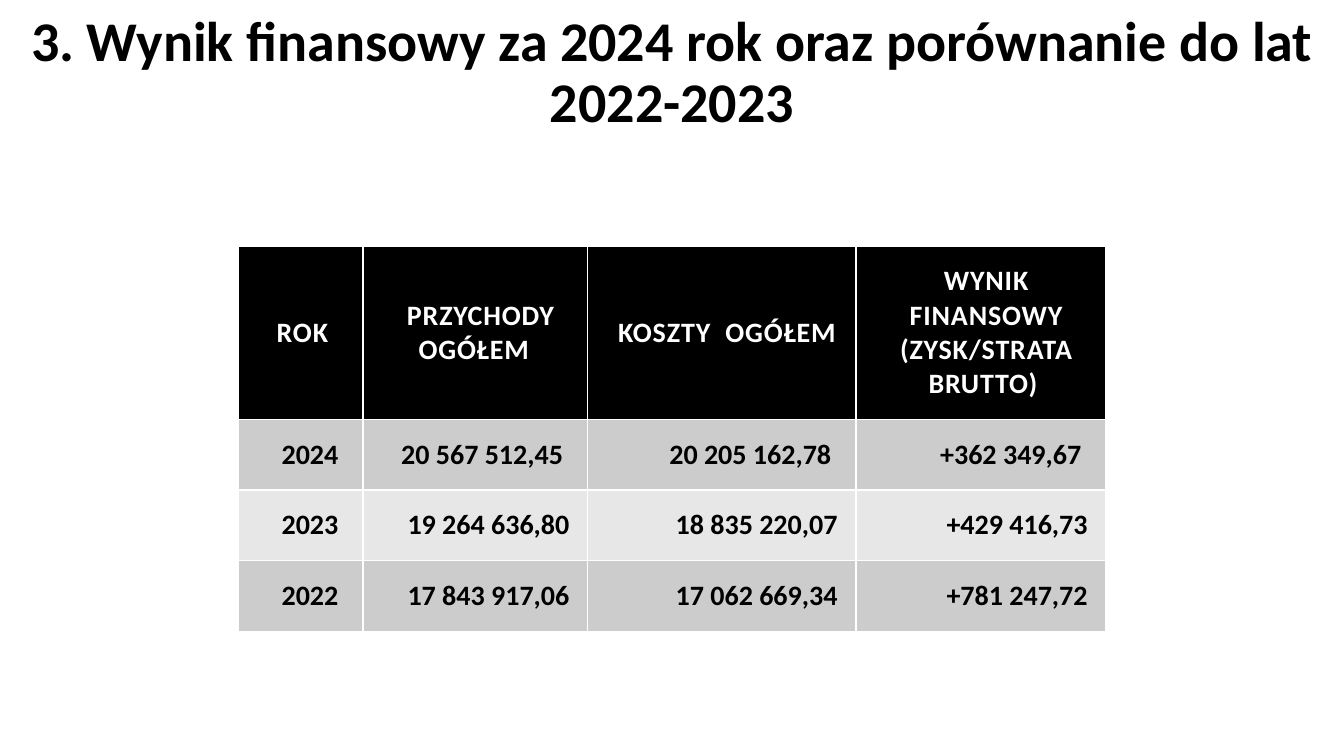
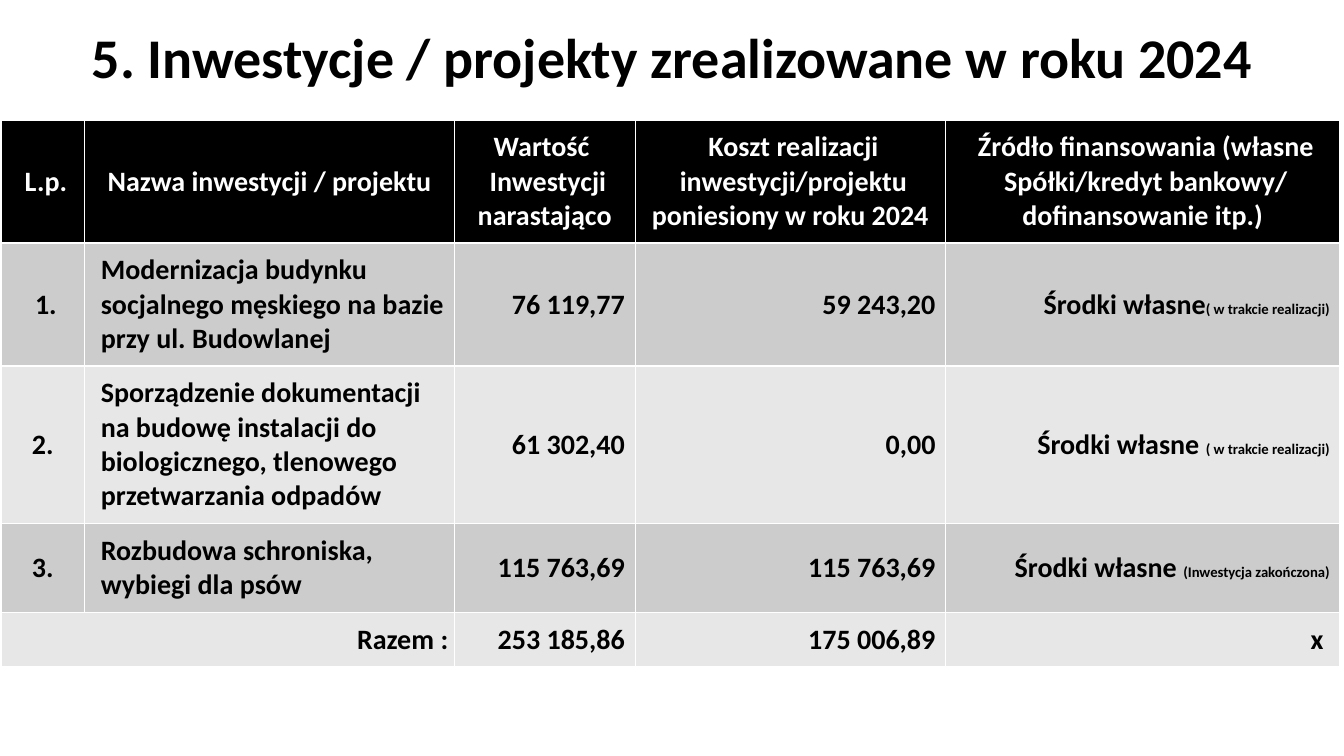
from dataclasses import dataclass
from lxml.etree import SubElement
from pptx import Presentation
from pptx.dml.color import RGBColor
from pptx.enum.text import MSO_ANCHOR, MSO_AUTO_SIZE, PP_ALIGN
from pptx.oxml.ns import qn
from pptx.util import Inches, Pt


@dataclass(frozen=True)
class Theme:
    font: str = "Calibri"
    black: str = "000000"
    white: str = "FFFFFF"
    bands: tuple = ("CCCCCC", "E7E7E7")
    title: float = 40
    body: float = 20
    note: float = 10.5
    rule: float = 1


THEME = Theme()
ALIGN = {"l": PP_ALIGN.LEFT, "c": PP_ALIGN.CENTER, "r": PP_ALIGN.RIGHT}

# A tuple cell holds main text and a small note; None joins the cell to its left.
SLIDES = [
    {
        "title": "3. Wynik finansowy za 2024 rok oraz porównanie do lat 2022-2023",
        "height": 1.47,
        "at": (2.36, 2.44),
        "cols": (1.24, 2.23, 2.66, 2.48),
        "heights": (1.71, 0.69, 0.69, 0.69),
        "align": "rrrr",
        "pad": (0.29, 0.18, 0.18, 0.18),
        "track": 0.6,
        "rows": [
            ["ROK ", "PRZYCHODY OGÓŁEM  ", "KOSZTY  OGÓŁEM ",
             "WYNIK FINANSOWY (ZYSK/STRATA BRUTTO) "],
            ["2024 ", "20 567 512,45 ", "20 205 162,78 ", "+362 349,67 "],
            ["2023 ", "19 264 636,80", "18 835 220,07", "+429 416,73"],
            ["2022 ", "17 843 917,06", "17 062 669,34", "+781 247,72"],
        ],
    },
    {
        "title": "5. Inwestycje / projekty zrealizowane w roku 2024",
        "height": 1.2,
        "at": (0.01, 1.19),
        "cols": (0.83, 3.67, 1.79, 3.08, 3.91),
        "heights": (1.21, 1.22, 1.56, 0.87, 0.54),
        "align": "clrrr",
        "pad": (0.16, 0.1, 0.1, 0.1),
        "track": 0,
        "rows": [
            ["L.p.", "Nazwa inwestycji / projektu ",
             "Wartość  \nInwestycji narastająco ",
             "Koszt realizacji inwestycji/projektu poniesiony w roku 2024 ",
             "Źródło finansowania (własne Spółki/kredyt bankowy/ dofinansowanie itp.) "],
            ["1.", "Modernizacja budynku socjalnego męskiego na bazie przy ul. Budowlanej",
             "76 119,77", "59 243,20", ("Środki własne", "( w trakcie realizacji)")],
            ["2. ", "Sporządzenie dokumentacji na budowę instalacji do biologicznego, "
             "tlenowego przetwarzania odpadów",
             "61 302,40", "0,00", ("Środki własne ", "( w trakcie realizacji)")],
            ["3. ", "Rozbudowa schroniska, wybiegi dla psów",
             "115 763,69", "115 763,69", ("Środki własne ", "(Inwestycja zakończona)")],
            ["Razem : ", None, "253 185,86", "175 006,89", "x "],
        ],
    },
]


def assign(obj, values):
    for name, value in values.items():
        setattr(obj, name, value)


def margins(pad):
    sides = ("left", "top", "right", "bottom")
    return {f"margin_{side}": Inches(size) for side, size in zip(sides, pad)}


def add_run(para, text, size, color, track=0):
    run = para.add_run()
    run.text = text
    assign(run.font, {"name": THEME.font, "size": Pt(size), "bold": True})
    run.font.color.rgb = RGBColor.from_string(color)
    if track:
        run._r.get_or_add_rPr().set("spc", str(round(track * 100)))


def add_rules(cell):
    """Draw the four cell borders, which must precede the fill in the XML."""
    props = cell._tc.get_or_add_tcPr()
    for spot, side in enumerate("LRTB"):
        line = SubElement(props, qn(f"a:ln{side}"), w=str(Pt(THEME.rule)))
        fill = SubElement(line, qn("a:solidFill"))
        SubElement(fill, qn("a:srgbClr"), val=THEME.white)
        props.insert(spot, line)


def set_title(slide, text, width, height):
    title = slide.shapes.title
    assign(title, {"left": 0, "top": 0, "width": width, "height": Inches(height)})
    frame = title.text_frame
    assign(frame, {"word_wrap": True, "auto_size": MSO_AUTO_SIZE.NONE,
                   "vertical_anchor": MSO_ANCHOR.MIDDLE,
                   **margins((0.07, 0.04, 0.07, 0.04))})
    para = frame.paragraphs[0]
    assign(para, {"alignment": PP_ALIGN.CENTER, "line_spacing": 0.9})
    add_run(para, text, THEME.title, THEME.black)


def fill_cell(cell, content, back, color, align, pad, track):
    assign(cell, {"vertical_anchor": MSO_ANCHOR.MIDDLE, **margins(pad)})
    cell.fill.solid()
    cell.fill.fore_color.rgb = RGBColor.from_string(back)
    add_rules(cell)
    main, note = content if isinstance(content, tuple) else (content, "")
    frame = cell.text_frame
    for index, text in enumerate(main.split("\n")):
        para = frame.add_paragraph() if index else frame.paragraphs[0]
        para.alignment = ALIGN[align]
        add_run(para, text, THEME.body, color, track)
    if note:
        add_run(para, note, THEME.note, color)


def add_grid(slide, data):
    rows, cols, heights = data["rows"], data["cols"], data["heights"]
    left, top = data["at"]
    table = slide.shapes.add_table(
        len(rows), len(cols), Inches(left), Inches(top),
        Inches(sum(cols)), Inches(sum(heights))).table
    for col, width in zip(table.columns, cols):
        col.width = Inches(width)
    for row, height in zip(table.rows, heights):
        row.height = Inches(height)
    for r, row in enumerate(rows):
        head = r == 0
        back = THEME.black if head else THEME.bands[(r - 1) % 2]
        color = THEME.white if head else THEME.black
        for c, content in enumerate(row):
            if content is None:
                continue
            align, pad = "c" if head else data["align"][c], data["pad"]
            if c + 1 < len(row) and row[c + 1] is None:
                table.cell(r, c).merge(table.cell(r, c + 1))
                align, pad = "r", (0, 0, 0, 0)
            fill_cell(table.cell(r, c), content, back, color, align, pad,
                      data["track"] if head else 0)


def main():
    deck = Presentation()
    assign(deck, {"slide_width": Inches(13.33), "slide_height": Inches(7.5)})
    for data in SLIDES:
        slide = deck.slides.add_slide(deck.slide_layouts[5])
        set_title(slide, data["title"], deck.slide_width, data["height"])
        add_grid(slide, data)
    deck.save("out.pptx")


if __name__ == "__main__":
    main()
